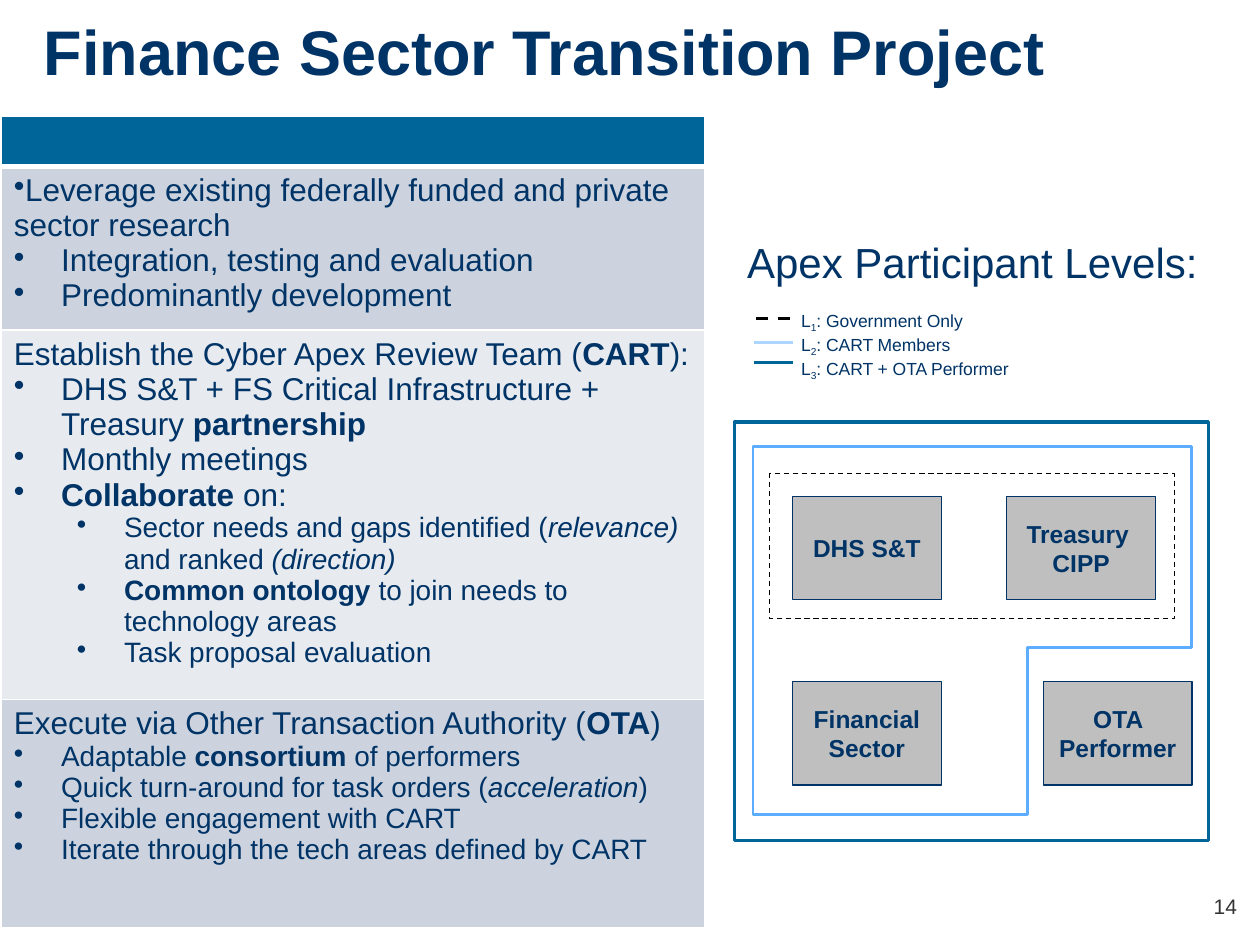
from lxml import etree
from pptx import Presentation
from pptx import util as u
from pptx.dml.color import RGBColor
from pptx.enum import dml, shapes, text
from pptx.oxml import ns

Pt = u.Pt


class Theme:
    font = "Arial"
    navy, blue, sky, pale = "003366", "006699", "5CADFF", "ADD6FF"
    box, band_dark, band_light = "BFBFBF", "CCD3DE", "E7EAEF"
    white, black, number = "FFFFFF", "000000", "333333"
    title_size, heading_size, body_size, detail_size = 36, 24, 18, 16
    label_size, number_size, legend_size = 14, 12, 10


T = Theme
STYLES = {"": {}, "b": {"bold": True}, "i": {"italic": True}, "sub": {}}
# Bullet levels: left margin and first-line indent
INDENTS = {"flush": (0, 0), "bullet": (27, -27), "sub-bullet": (63, -27)}

# Each paragraph: level, size, then runs as (text, style)
RESEARCH = [
    ("flush", T.body_size,
     [("Leverage existing federally funded and private sector research", "")]),
    ("bullet", T.body_size, [("Integration, testing and evaluation", "")]),
    ("bullet", T.body_size, [("Predominantly development", "")]),
]
REVIEW_TEAM = [
    (None, T.body_size,
     [("Establish the Cyber Apex Review Team (", ""), ("CART", "b"), ("):", "")]),
    ("bullet", T.body_size,
     [("DHS S&T + FS Critical Infrastructure + Treasury ", ""), ("partnership", "b")]),
    ("bullet", T.body_size, [("Monthly meetings", "")]),
    ("bullet", T.body_size, [("Collaborate", "b"), (" on:", "")]),
    ("sub-bullet", T.detail_size,
     [("Sector needs and gaps identified (", ""), ("relevance) ", "i"),
      ("and ranked ", ""), ("(direction)", "i")]),
    ("sub-bullet", T.detail_size,
     [("Common ontology ", "b"), ("to join needs to technology areas", "")]),
    ("sub-bullet", T.detail_size, [("Task proposal evaluation", "")]),
]
AUTHORITY = [
    (None, T.body_size,
     [("Execute via Other Transaction Authority (", ""), ("OTA", "b"), (")", "")]),
    ("bullet", T.detail_size,
     [("Adaptable ", ""), ("consortium", "b"), (" of performers", "")]),
    ("bullet", T.detail_size,
     [("Quick turn-around for task orders (", ""), ("acceleration", "i"), (")", "")]),
    ("bullet", T.detail_size, [("Flexible engagement with CART", "")]),
    ("bullet", T.detail_size, [("Iterate through the tech areas defined by CART", "")]),
]
# Table rows: height, fill, paragraphs
ROWS = [(27.4, T.blue, []), (90.7, T.band_dark, RESEARCH),
        (203.8, T.band_light, REVIEW_TEAM), (130.3, T.band_dark, AUTHORITY)]

TOP_Y, BOTTOM_Y = 283.7, 389.5
PARTICIPANTS = [(452.9, TOP_Y, ["DHS S&T"]), (575.3, TOP_Y, ["Treasury ", "CIPP"]),
                (596.2, BOTTOM_Y, ["OTA Performer"]), (452.9, BOTTOM_Y, ["Financial Sector"])]
# Members' border, notched around the OTA performer
MEMBERS = [(430.3, 255.2), (680.9, 255.2), (680.9, 370.2),
           (587.2, 370.2), (587.2, 465.5), (430.3, 465.5)]

# Legend keys: left, y, colour, dashed, meaning
LEVELS = [(432, 182.2, T.black, True, ": Government Only"),
          (430.6, 195.8, T.pale, False, ": CART Members"),
          (430.6, 207.4, T.blue, False, ": CART + OTA Performer")]


def set_all(target, values):
    for name, value in values.items():
        setattr(target, name, value)


def paint(fill, color):
    fill.solid()
    fill.fore_color.rgb = RGBColor.from_string(color)


def add_bullet(paragraph, level):
    margin, indent = INDENTS[level]
    props = paragraph._p.get_or_add_pPr()
    props.set("marL", str(Pt(margin)))
    props.set("indent", str(Pt(indent)))
    etree.SubElement(props, ns.qn("a:buChar")).set("char", "•")


def write(frame, paragraphs, color=T.navy, align=None):
    for index, (level, size, runs) in enumerate(paragraphs):
        paragraph = frame.add_paragraph() if index else frame.paragraphs[0]
        if level:
            add_bullet(paragraph, level)
        paragraph.alignment = align
        for words, style in runs:
            run = paragraph.add_run()
            run.text = words
            set_all(run.font, {"name": T.font, "size": Pt(size), **STYLES[style]})
            run.font.color.rgb = RGBColor.from_string(color)
            if style == "sub":
                run._r.get_or_add_rPr().set("baseline", "-25000")


def add_text(slide, place, paragraphs, color=T.navy, align=None,
             anchor=text.MSO_ANCHOR.TOP, wrap=True):
    frame = slide.shapes.add_textbox(*map(Pt, place)).text_frame
    set_all(frame, {"word_wrap": wrap, "vertical_anchor": anchor})
    write(frame, paragraphs, color, align)


def style_line(line, color, width, dashed=False):
    paint(line.fill, color)
    line.width = Pt(width)
    if dashed:
        line.dash_style = dml.MSO_LINE.DASH


def style_outline(shape, color, width, dashed=False):
    shape.shadow.inherit = False
    shape.fill.background()
    style_line(shape.line, color, width, dashed)


def add_border_box(slide, place, color, width, dashed=False):
    box = slide.shapes.add_shape(shapes.MSO_SHAPE.RECTANGLE, *map(Pt, place))
    style_outline(box, color, width, dashed)


def add_participant(slide, left, top, lines):
    box = slide.shapes.add_shape(shapes.MSO_SHAPE.FLOWCHART_PROCESS,
                                 *map(Pt, (left, top, 85, 59)))
    style_outline(box, T.navy, 0.75)
    paint(box.fill, T.box)
    set_all(box.text_frame, {"word_wrap": True, "vertical_anchor": text.MSO_ANCHOR.MIDDLE})
    write(box.text_frame, [(None, T.label_size, [(line, "b")]) for line in lines],
          align=text.PP_ALIGN.CENTER)


def add_key(slide, left, y, color, dashed):
    key = slide.shapes.add_connector(shapes.MSO_CONNECTOR.STRAIGHT,
                                     *map(Pt, (left, y, left + 22.3, y)))
    style_line(key.line, color, 1.75, dashed)
    etree.SubElement(key._element.spPr, ns.qn("a:effectLst"))


def add_cell_border(cell, side, width):
    line = etree.SubElement(cell._tc.get_or_add_tcPr(), ns.qn(f"a:ln{side}"))
    line.set("w", str(Pt(width)))
    fill = etree.SubElement(line, ns.qn("a:solidFill"))
    etree.SubElement(fill, ns.qn("a:srgbClr")).set("val", T.white)


def add_goals(slide):
    place = (0.7, 66.2, 401.8, sum(row[0] for row in ROWS))
    table = slide.shapes.add_table(len(ROWS), 1, *map(Pt, place)).table
    for index, (height, fill, paragraphs) in enumerate(ROWS):
        table.rows[index].height = Pt(height)
        cell = table.cell(index, 0)
        # The rule under the header is heavier
        for side in "LRTB":
            heavy = (index, side) in ((0, "B"), (1, "T"))
            add_cell_border(cell, side, 3 if heavy else 1)
        paint(cell.fill, fill)
        write(cell.text_frame, paragraphs)


def main():
    deck = Presentation()
    set_all(deck, {"slide_width": Pt(720), "slide_height": Pt(540)})
    slide = deck.slides.add_slide(deck.slide_layouts[6])
    # Title and page number
    add_text(slide, (18, 6, 684, 48),
             [(None, T.title_size, [("Finance Sector Transition Project", "b")])],
             anchor=text.MSO_ANCHOR.BOTTOM)
    add_text(slide, (678, 509, 36, 18), [(None, T.number_size, [("14", "")])],
             T.number, text.PP_ALIGN.RIGHT, text.MSO_ANCHOR.MIDDLE)
    add_goals(slide)
    # Participants and the borders of the three levels
    for participant in PARTICIPANTS:
        add_participant(slide, *participant)
    corners = [tuple(map(Pt, corner)) for corner in MEMBERS]
    builder = slide.shapes.build_freeform(*corners[0])
    builder.add_line_segments(corners[1:], close=True)
    style_outline(builder.convert_to_shape(), T.sky, 1.5)
    add_border_box(slide, (439.9, 270.7, 231.1, 82.8), T.black, 0.75, dashed=True)
    add_border_box(slide, (419.8, 241.2, 270.7, 239), T.blue, 2)
    # Legend
    add_text(slide, (419.8, 131.8, 275, 36),
             [(None, T.heading_size, [("Apex Participant Levels:", "")])], wrap=False)
    for level in LEVELS:
        add_key(slide, *level[:-1])
    add_text(slide, (450.7, 173.5, 136.8, 44),
             [(None, T.legend_size, [("L", ""), (str(number), "sub"), (level[-1], "")])
              for number, level in enumerate(LEVELS, 1)], wrap=False)
    deck.save("out.pptx")


if __name__ == "__main__":
    main()
